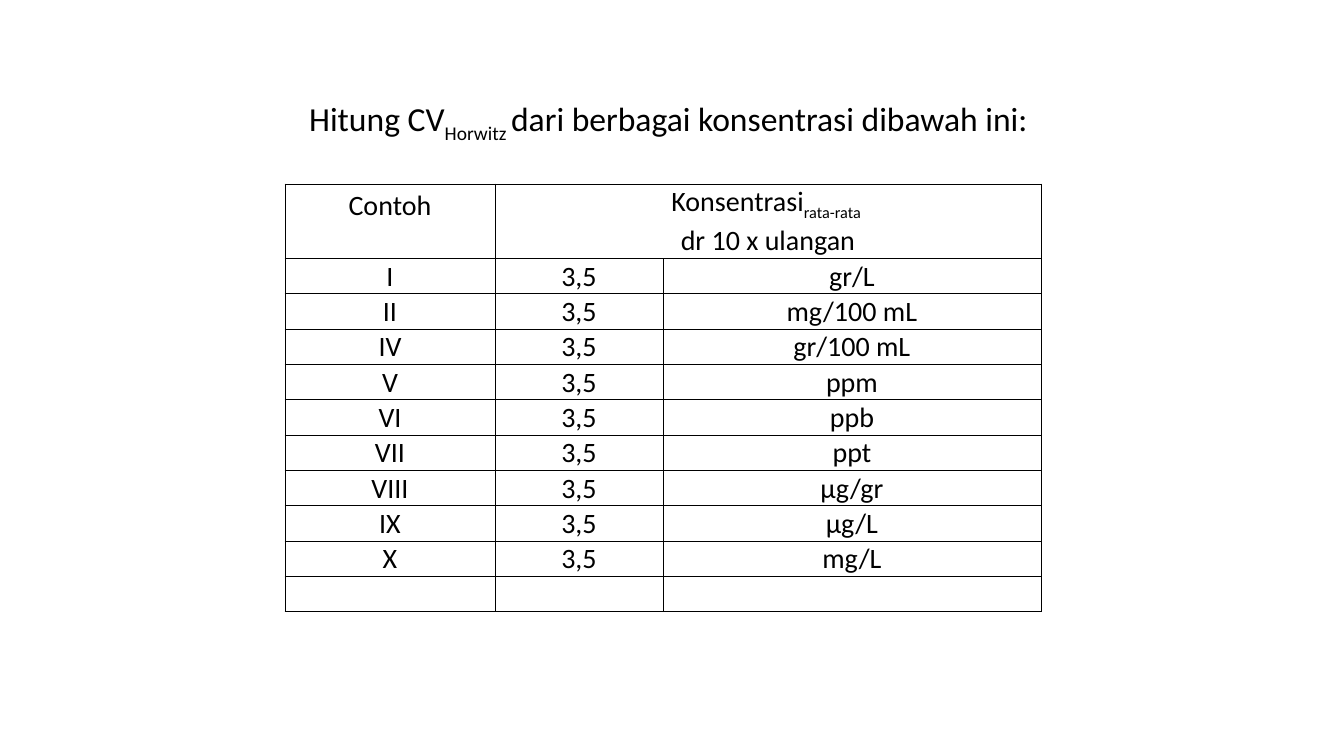
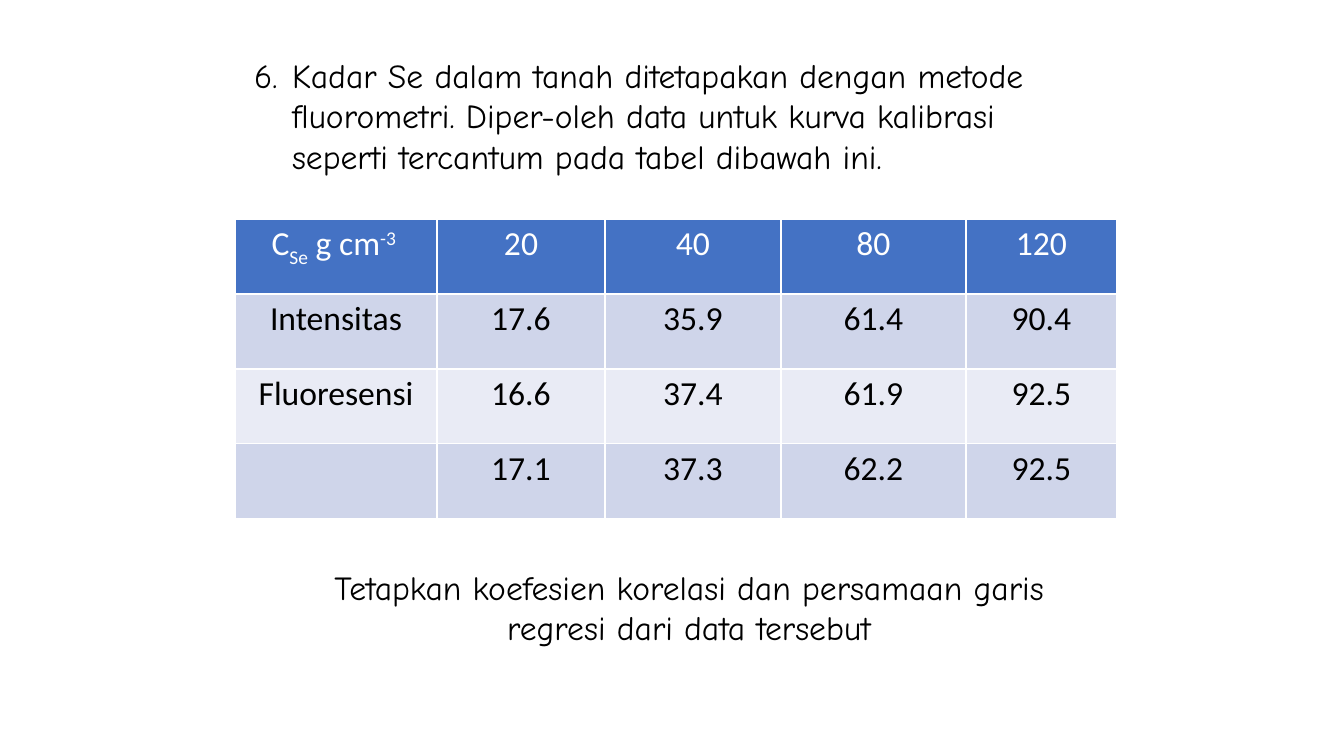
from dataclasses import dataclass

from lxml import etree
from pptx import Presentation
from pptx.dml.color import RGBColor
from pptx.enum.text import MSO_ANCHOR, MSO_AUTO_SIZE, PP_ALIGN
from pptx.oxml.ns import qn
from pptx.util import Emu, Pt

CENTER, LEFT = PP_ALIGN.CENTER, PP_ALIGN.LEFT
TOP, BOTTOM = MSO_ANCHOR.TOP, MSO_ANCHOR.BOTTOM
NO_AUTOFIT = MSO_AUTO_SIZE.NONE
PX_PER_INCH = 100.8
TITLE_AND_CONTENT, TITLE_ONLY = 1, 5
SUB, SUPER = -25000, 30000


@dataclass(frozen=True)
class Theme:
    ink: str = "000000"
    paper: str = "FFFFFF"
    header: str = "4472C4"
    bands: tuple = ("CFD5EA", "E9EBF5")
    sans: str = "Calibri"
    comic: str = "Comic Neue"
    text_size: int = 24
    table_size: int = 20


THEME = Theme()


def px(n):
    return Emu(round(n * 914400 / PX_PER_INCH))


def write_text(tf, runs, font=THEME.sans, size=THEME.text_size,
               color=THEME.ink, align=CENTER):
    """Fill the first paragraph; runs is a string or (text, baseline) pairs."""
    p = tf.paragraphs[0]
    p.alignment = align
    p.space_before = Pt(0)
    for text, baseline in [(runs, 0)] if isinstance(runs, str) else runs:
        r = p.add_run()
        r.text = text
        r.font.name = font
        r.font.size = Pt(size)
        r.font.bold = False
        r.font.color.rgb = RGBColor.from_string(color)
        if baseline:
            r._r.get_or_add_rPr().set("baseline", str(baseline))
    return p


def place_text(shape, box, runs, **fmt):
    shape.left, shape.top, shape.width, shape.height = map(px, box)
    tf = shape.text_frame
    tf.word_wrap = True
    tf.auto_size = NO_AUTOFIT
    tf.vertical_anchor = TOP
    return write_text(tf, runs, **fmt)


def number_paragraph(p, start, indent):
    pPr = p._p.get_or_add_pPr()
    pPr.set("marL", str(px(indent)))
    pPr.set("indent", str(-px(indent)))
    bullet = etree.SubElement(pPr, qn("a:buAutoNum"))
    bullet.set("type", "arabicPeriod")
    bullet.set("startAt", str(start))


def set_borders(cell, color, width, hidden=""):
    """Draw all four edges except those named in hidden, such as "T" or "B"."""
    tcPr = cell._tc.get_or_add_tcPr()
    for edge in "LRTB":
        ln = etree.SubElement(tcPr, qn(f"a:ln{edge}"), w=str(Pt(width)))
        if edge in hidden:
            etree.SubElement(ln, qn("a:noFill"))
        else:
            fill = etree.SubElement(ln, qn("a:solidFill"))
            etree.SubElement(fill, qn("a:srgbClr"), val=color)


def add_grid(s, left, top, widths, row_height, rows, border, width,
             fills=None, hidden=None, margins=(10, 5, 10, 5), anchor=TOP,
             header_color=THEME.ink, size=THEME.text_size):
    """Add a table; fills lists row colours, hidden maps a row to open edges."""
    frame = s.shapes.add_table(len(rows), len(widths), px(left), px(top),
                               px(sum(widths)), px(row_height * len(rows)))
    table = frame.table
    table.first_row = table.horz_banding = False
    for column, w in zip(table.columns, widths):
        column.width = px(w)
    for i, row in enumerate(rows):
        table.rows[i].height = px(row_height)
        for j, runs in enumerate(row):
            cell = table.cell(i, j)
            (cell.margin_left, cell.margin_top,
             cell.margin_right, cell.margin_bottom) = map(px, margins)
            cell.vertical_anchor = anchor
            set_borders(cell, border, width, (hidden or {}).get(i, ""))
            if fills:
                cell.fill.solid()
                cell.fill.fore_color.rgb = RGBColor.from_string(fills[i])
            else:
                cell.fill.background()
            if runs:
                write_text(cell.text_frame, runs, size=size,
                           color=THEME.ink if i else header_color)
    return table


def build_horwitz(prs):
    s = prs.slides.add_slide(prs.slide_layouts[TITLE_ONLY])
    samples = ["I", "II", "IV", "V", "VI", "VII", "VIII", "IX", "X"]
    units = ["gr/L", "mg/100 mL", "gr/100 mL", "ppm", "ppb", "ppt",
             "µg/gr", "μg/L", "mg/L"]
    rows = [
        ["Contoh", [("Konsentrasi", 0), ("rata-rata ", SUB)], ""],
        ["", "dr 10 x ulangan", ""],
        *([sample, "3,5", unit] for sample, unit in zip(samples, units)),
        ["", "", ""],
    ]
    table = add_grid(s, 285, 184, [210, 168, 378], 35, rows, THEME.ink, 0.5,
                     hidden={0: "B", 1: "T"}, margins=(1, 1, 1, 0),
                     anchor=BOTTOM, size=THEME.table_size)
    for i in range(2):
        table.cell(i, 1).merge(table.cell(i, 2))
    place_text(s.shapes.title, (219, 93, 899, 51),
               [("Hitung CV", 0), ("Horwitz ", SUB),
                ("dari berbagai konsentrasi dibawah ini:", 0)])


def build_calibration(prs):
    s = prs.slides.add_slide(prs.slide_layouts[TITLE_AND_CONTENT])
    title = s.shapes.title._element
    title.getparent().remove(title)
    rows = [
        [[("C", 0), ("Se", SUB), (" g cm", 0), ("-3 ", SUPER)],
         "20", "40", "80", "120"],
        ["Intensitas", "17.6", "35.9", "61.4", "90.4"],
        ["Fluoresensi", "16.6", "37.4", "61.9", "92.5"],
        ["", "17.1", "37.3", "62.2", "92.5"],
    ]
    fills = [THEME.header] + [THEME.bands[i % 2] for i in range(len(rows) - 1)]
    add_grid(s, 235, 219, [202, 168, 176, 185, 151], 75, rows, THEME.paper, 1,
             fills=fills, header_color=THEME.paper)
    question = place_text(
        s.placeholders[1], (244, 50, 865, 163),
        "Kadar Se dalam tanah ditetapakan dengan metode fluorometri. "
        "Diper-oleh data untuk kurva kalibrasi seperti tercantum pada tabel "
        "dibawah ini.", font=THEME.comic, align=LEFT)
    number_paragraph(question, start=6, indent=38)
    place_text(s.shapes.add_textbox(0, 0, 0, 0), (277, 562, 824, 122),
               "Tetapkan koefesien korelasi dan persamaan garis regresi dari "
               "data tersebut", font=THEME.comic)


def main():
    prs = Presentation()
    prs.slide_width, prs.slide_height = px(1344), px(756)
    build_horwitz(prs)
    build_calibration(prs)
    prs.save("out.pptx")


if __name__ == "__main__":
    main()
